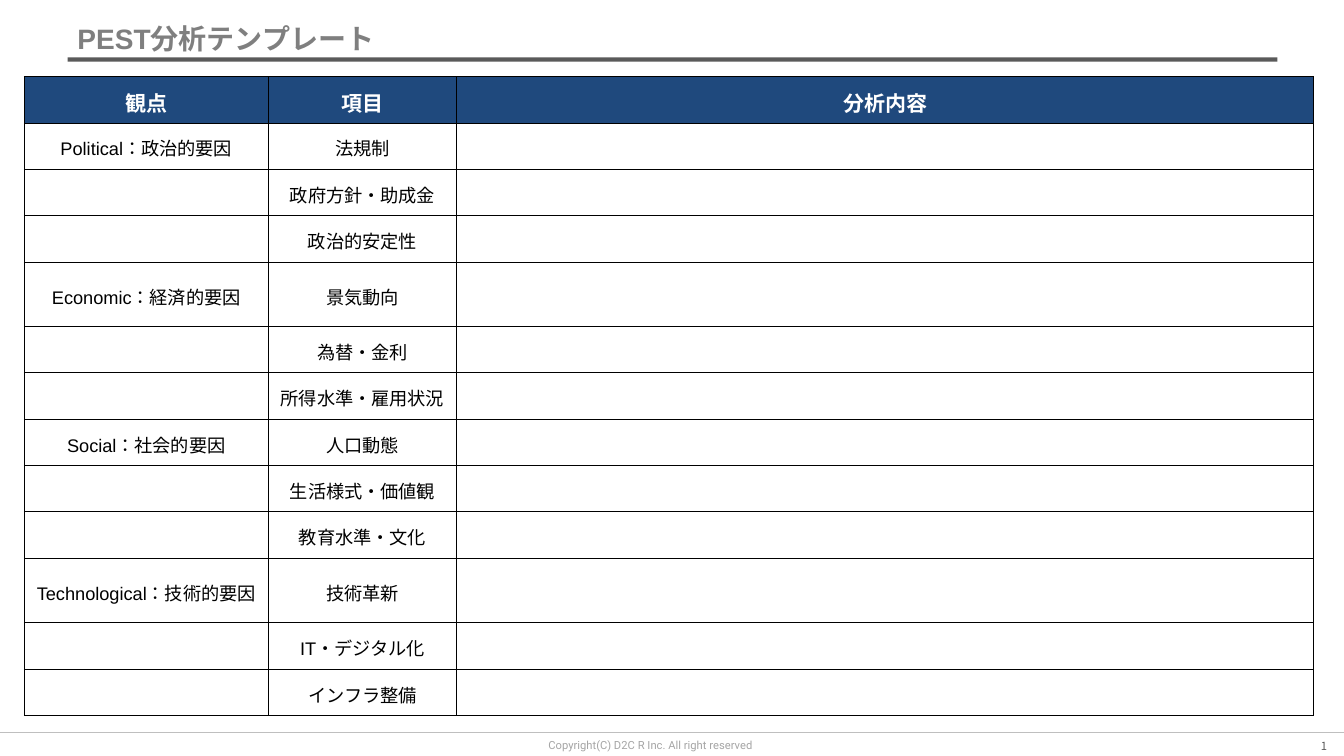
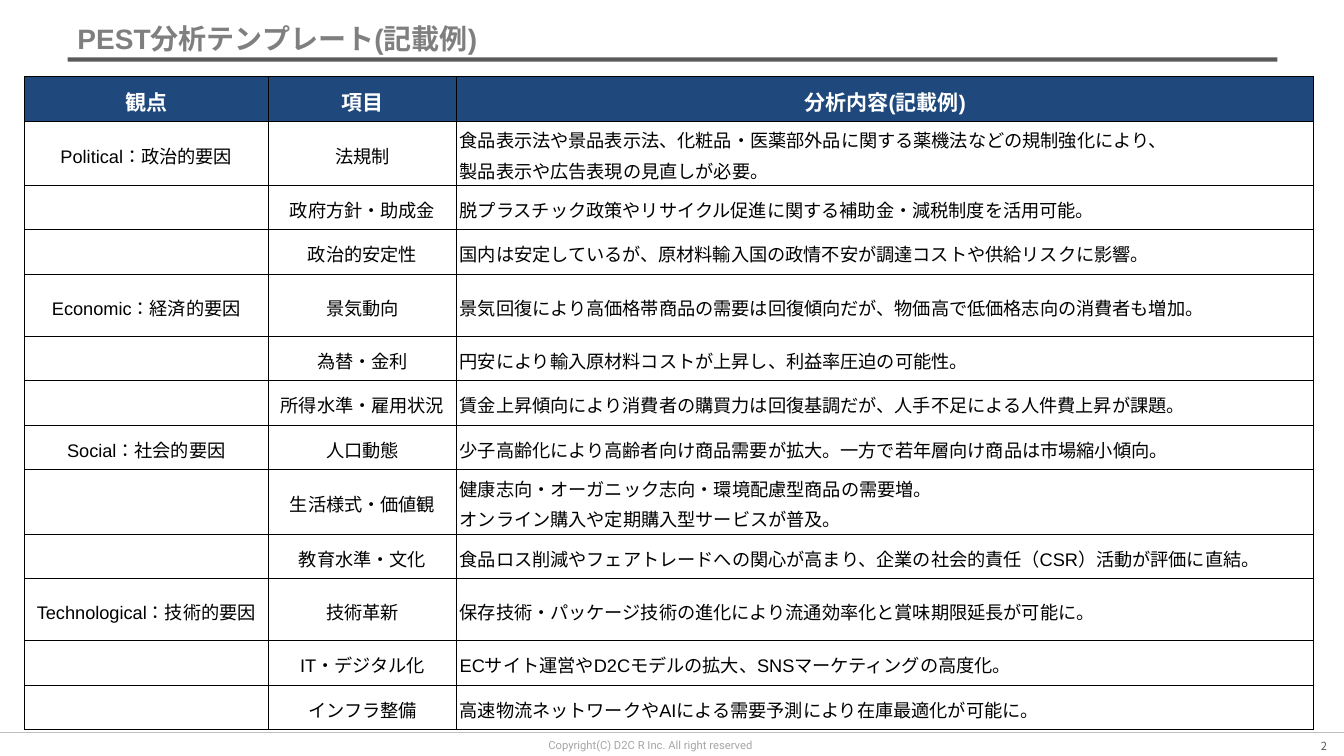
from lxml.etree import SubElement
from pptx import Presentation
from pptx.dml.color import RGBColor
from pptx.enum.lang import MSO_LANGUAGE_ID
from pptx.enum.shapes import MSO_CONNECTOR
from pptx.enum.text import MSO_ANCHOR, PP_ALIGN
from pptx.oxml.ns import qn
from pptx.util import Inches, Pt

COLORS = {
    "title": "7F7F7F", "title_rule": "0C0C0C", "footer_rule": "BFBFBF",
    "copyright": "A5A5A5", "number": "595959", "header": "1F497D",
    "header_text": "FFFFFF", "text": "000000", "border": "000000",
}

FORMATS = {
    "title": {"size": Pt(20), "bold": True, "name": "Arial"},
    "copyright": {"size": Pt(8), "bold": False, "name": "Roboto"},
    "number": {"size": Pt(8), "bold": False, "name": "Noto Sans CJK JP"},
    "header_text": {"size": Pt(15), "bold": True, "name": "Arial"},
    "text": {"size": Pt(13), "bold": False, "name": "Arial"},
}

EAST_ASIAN_FONTS = {"header_text": "Noto Sans CJK JP", "text": "Noto Sans CJK JP"}

COPYRIGHT = "Copyright(C) D2C R Inc. All right reserved"

FACTORS = [
    ("Political：政治的要因", ["法規制", "政府方針・助成金", "政治的安定性"]),
    ("Economic：経済的要因", ["景気動向", "為替・金利", "所得水準・雇用状況"]),
    ("Social：社会的要因", ["人口動態", "生活様式・価値観", "教育水準・文化"]),
    ("Technological：技術的要因", ["技術革新", "IT・デジタル化", "インフラ整備"]),
]

EXAMPLES = {
    "法規制": [
        "食品表示法や景品表示法、化粧品・医薬部外品に関する薬機法などの規制強化により、",
        "製品表示や広告表現の見直しが必要。",
    ],
    "政府方針・助成金": ["脱プラスチック政策やリサイクル促進に関する補助金・減税制度を活用可能。"],
    "政治的安定性": ["国内は安定しているが、原材料輸入国の政情不安が調達コストや供給リスクに影響。"],
    "景気動向": ["景気回復により高価格帯商品の需要は回復傾向だが、物価高で低価格志向の消費者も増加。"],
    "為替・金利": ["円安により輸入原材料コストが上昇し、利益率圧迫の可能性。"],
    "所得水準・雇用状況": ["賃金上昇傾向により消費者の購買力は回復基調だが、人手不足による人件費上昇が課題。"],
    "人口動態": ["少子高齢化により高齢者向け商品需要が拡大。一方で若年層向け商品は市場縮小傾向。"],
    "生活様式・価値観": [
        "健康志向・オーガニック志向・環境配慮型商品の需要増。",
        "オンライン購入や定期購入型サービスが普及。",
    ],
    "教育水準・文化": ["食品ロス削減やフェアトレードへの関心が高まり、企業の社会的責任（CSR）活動が評価に直結。"],
    "技術革新": ["保存技術・パッケージ技術の進化により流通効率化と賞味期限延長が可能に。"],
    "IT・デジタル化": ["ECサイト運営やD2Cモデルの拡大、SNSマーケティングの高度化。"],
    "インフラ整備": ["高速物流ネットワークやAIによる需要予測により在庫最適化が可能に。"],
}

PAGES = [
    {"title": "PEST分析テンプレート", "content": "分析内容", "examples": {}, "row": 0.46},
    {"title": "PEST分析テンプレート(記載例)", "content": "分析内容(記載例)",
     "examples": EXAMPLES, "row": 0.44},
]

COLUMN_WIDTHS = [2.42, 1.87, 8.5]
TALL_ITEMS = {"景気動向", "技術革新"}
TALL_EXTRA = 0.18
TWO_LINE_EXTRA = 0.2
CELL_MARGINS = {"margin_left": 0.03, "margin_right": 0.03,
                "margin_top": 0.02, "margin_bottom": 0.02}


def color(role):
    return RGBColor.from_string(COLORS[role])


def add_span(para, text, role):
    span = para.add_run()
    span.text = text
    for name, value in FORMATS[role].items():
        setattr(span.font, name, value)
    span.font.color.rgb = color(role)
    span.font.language_id = MSO_LANGUAGE_ID.JAPANESE
    properties = span._r.get_or_add_rPr()
    typeface = EAST_ASIAN_FONTS.get(role, FORMATS[role]["name"])
    SubElement(properties, qn("a:ea"), typeface=typeface)
    return span


def add_box(page, area, text, role, align=PP_ALIGN.LEFT, anchor=MSO_ANCHOR.TOP):
    box = page.shapes.add_textbox(*map(Inches, area))
    frame = box.text_frame
    frame.word_wrap = True
    frame.vertical_anchor = anchor
    para = frame.paragraphs[0]
    para.alignment = align
    return para, add_span(para, text, role)


def add_rule(page, left, right, top, role, width, opacity=100):
    rule = page.shapes.add_connector(
        MSO_CONNECTOR.STRAIGHT, *map(Inches, (left, top, right, top)))
    rule.line.color.rgb = color(role)
    rule.line.width = Pt(width)
    SubElement(rule._element.spPr, qn("a:effectLst"))
    for tone in rule._element.spPr.iter(qn("a:srgbClr")):
        SubElement(tone, qn("a:alpha"), val=str(opacity * 1000))


def add_frame(page, title, number):
    add_rule(page, 0.67, 12.67, 0.59, "title_rule", 3, 68)
    add_rule(page, 0, 13.33, 7.27, "footer_rule", 0.75)
    add_box(page, (5.34, 7.28, 2.53, 0.24), COPYRIGHT, "copyright")
    para, span = add_box(page, (12.48, 7.29, 0.78, 0.29), str(number),
                         "number", PP_ALIGN.RIGHT)
    field = SubElement(para._p, qn("a:fld"), type="slidenum",
                       id="{B6F15528-21DE-4FAA-801E-634DDDAF4B2B}")
    field.extend(list(span._r))
    para._p.remove(span._r)
    add_box(page, (0.67, 0.11, 12, 0.54), title, "title", anchor=MSO_ANCHOR.MIDDLE)


def fill_cell(cell, lines, role, align):
    for name, value in CELL_MARGINS.items():
        setattr(cell, name, Inches(value))
    cell.vertical_anchor = MSO_ANCHOR.MIDDLE
    properties = cell._tc.get_or_add_tcPr()
    for side in ("lnL", "lnR", "lnT", "lnB"):
        border = SubElement(properties, qn(f"a:{side}"), w=str(Pt(0.68)))
        paint = SubElement(border, qn("a:solidFill"))
        SubElement(paint, qn("a:srgbClr"), val=COLORS["border"])
    if role == "header_text":
        cell.fill.solid()
        cell.fill.fore_color.rgb = color("header")
    else:
        cell.fill.background()
    frame = cell.text_frame
    for index, line in enumerate(lines):
        para = frame.add_paragraph() if index else frame.paragraphs[0]
        para.alignment = align
        para.line_spacing = 1.15
        add_span(para, line, role)


def add_factor_table(page, content, examples, row):
    rows = [(["観点"], ["項目"], [content])]
    heights = [row]
    for factor, items in FACTORS:
        for index, item in enumerate(items):
            lines = examples.get(item, [])
            rows.append(([] if index else [factor], [item], lines))
            extra = TALL_EXTRA if item in TALL_ITEMS else 0
            heights.append(row + extra + (TWO_LINE_EXTRA if len(lines) > 1 else 0))
    area = (0.24, 0.76, sum(COLUMN_WIDTHS), sum(heights))
    table = page.shapes.add_table(
        len(rows), len(COLUMN_WIDTHS), *map(Inches, area)).table
    table.first_row = table.horz_banding = False
    for column, width in zip(table.columns, COLUMN_WIDTHS):
        column.width = Inches(width)
    for row_index, (cells, height) in enumerate(zip(rows, heights)):
        table.rows[row_index].height = Inches(height)
        role = "text" if row_index else "header_text"
        for column_index, lines in enumerate(cells):
            is_content = row_index > 0 and column_index == 2
            align = PP_ALIGN.LEFT if is_content else PP_ALIGN.CENTER
            fill_cell(table.cell(row_index, column_index), lines, role, align)


def main():
    deck = Presentation()
    deck.slide_width, deck.slide_height = Inches(13.33), Inches(7.5)
    for number, entry in enumerate(PAGES, 1):
        page = deck.slides.add_slide(deck.slide_layouts[6])
        add_frame(page, entry["title"], number)
        add_factor_table(page, entry["content"], entry["examples"], entry["row"])
    deck.save("out.pptx")


if __name__ == "__main__":
    main()
